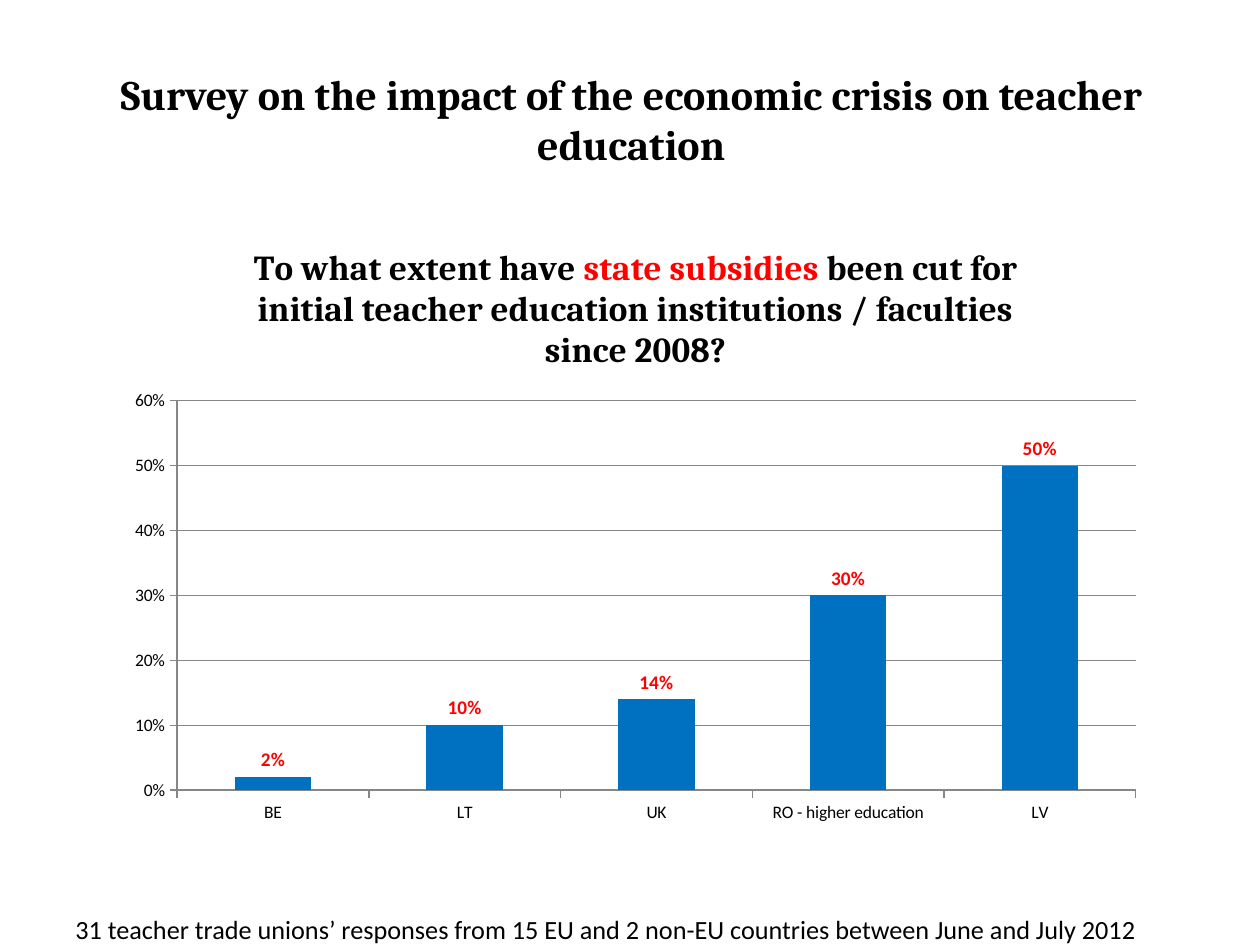
from pptx import Presentation
from pptx import util as u
from pptx.chart.data import CategoryChartData
from pptx.dml.color import RGBColor
from pptx.enum import chart as ch, text as t
from pptx.oxml import parse_xml
from pptx.oxml.ns import nsdecls

COLORS = {"ink": "000000", "accent": "FF0000", "bar": "0070C0", "line": "868686"}
SUBSIDY_CUTS = {"BE": 0.02, "LT": 0.1, "UK": 0.14,
                "RO - higher education": 0.3, "LV": 0.5}


def style_font(font, name, size, color="ink", bold=False):
    font.name, font.size, font.bold = name, u.Pt(size), bold
    font.color.rgb = RGBColor.from_string(COLORS[color])


def add_span(para, words, *style):
    span = para.add_run()
    span.text = words
    style_font(span.font, *style)


def add_text(page, box, words, align, *style):
    frame = page.shapes.add_textbox(*map(u.Inches, box)).text_frame
    frame.word_wrap = True
    frame.vertical_anchor = t.MSO_ANCHOR.MIDDLE
    frame.margin_bottom = 0
    para = frame.paragraphs[0]
    para.alignment = align
    add_span(para, words, *style)


def set_line(line):
    line.color.rgb = RGBColor.from_string(COLORS["line"])
    line.width = u.Pt(0.75)


def set_plot_area(chart, left, top, width, height):
    """Fix the inner plot area, in fractions of the chart."""
    area = chart.plots[0]._element.getparent()
    for old in area.findall("{*}layout"):
        area.remove(old)
    sizes = "".join(f'<c:{tag} val="{value}"/>' for tag, value in
                    zip("xywh", (left, top, width, height)))
    area.insert(0, parse_xml(
        f'<c:layout {nsdecls("c")}><c:manualLayout><c:layoutTarget val="inner"/>'
        f'<c:xMode val="edge"/><c:yMode val="edge"/>{sizes}'
        '</c:manualLayout></c:layout>'))


def add_subsidy_chart(page, box):
    data = CategoryChartData(number_format="0%")
    data.categories = list(SUBSIDY_CUTS)
    data.add_series("Series 1", list(SUBSIDY_CUTS.values()))
    chart = page.shapes.add_chart(ch.XL_CHART_TYPE.COLUMN_CLUSTERED,
                                  *map(u.Inches, box), data).chart
    style_font(chart.font, "Calibri", 10)
    chart.has_legend = False

    chart.has_title = True
    chart.chart_title.include_in_layout = False
    question = chart.chart_title.text_frame.paragraphs[0]
    for words, color in (
            ("To what extent have ", "ink"), ("state subsidies", "accent"),
            (" been cut for initial teacher education institutions / faculties"
             " since 2008?", "ink")):
        add_span(question, words, "Cambria", 20, color, True)

    plot = chart.plots[0]
    plot.gap_width = 150
    plot.vary_by_categories = False
    bars = plot.series[0].format.fill
    bars.solid()
    bars.fore_color.rgb = RGBColor.from_string(COLORS["bar"])
    plot.has_data_labels = True
    labels = plot.data_labels
    labels.show_value = True
    labels.number_format, labels.number_format_is_linked = "0%", False
    labels.position = ch.XL_LABEL_POSITION.OUTSIDE_END
    style_font(labels.font, "Calibri", 11, "accent", True)

    for axis in (chart.category_axis, chart.value_axis):
        axis.major_tick_mark = ch.XL_TICK_MARK.OUTSIDE
        axis.minor_tick_mark = ch.XL_TICK_MARK.NONE
        set_line(axis.format.line)
    scale = chart.value_axis
    scale.minimum_scale, scale.maximum_scale, scale.major_unit = 0, 0.6, 0.1
    scale.tick_labels.number_format = "0%"
    scale.tick_labels.number_format_is_linked = False
    scale.has_major_gridlines = True
    set_line(scale.major_gridlines.format.line)
    set_plot_area(chart, 0.06, 0.29, 0.92, 0.64)


def main():
    deck = Presentation()
    deck.slide_width, deck.slide_height = u.Inches(10), u.Inches(7.5)
    page = deck.slides.add_slide(deck.slide_layouts[6])
    add_text(page, (0.51, 0.29, 9, 1.25),
             "Survey on the impact of the economic crisis on teacher education",
             t.PP_ALIGN.CENTER, "Cambria", 24, "ink", True)
    add_subsidy_chart(page, (0.91, 1.78, 8.27, 4.83))
    add_text(page, (0.5, 7.2, 9, 0.3),
             "31 teacher trade unions’ responses from 15 EU and 2 non-EU countries "
             "between June and July 2012", t.PP_ALIGN.LEFT, "Calibri", 15)
    deck.save("out.pptx")


if __name__ == "__main__":
    main()
